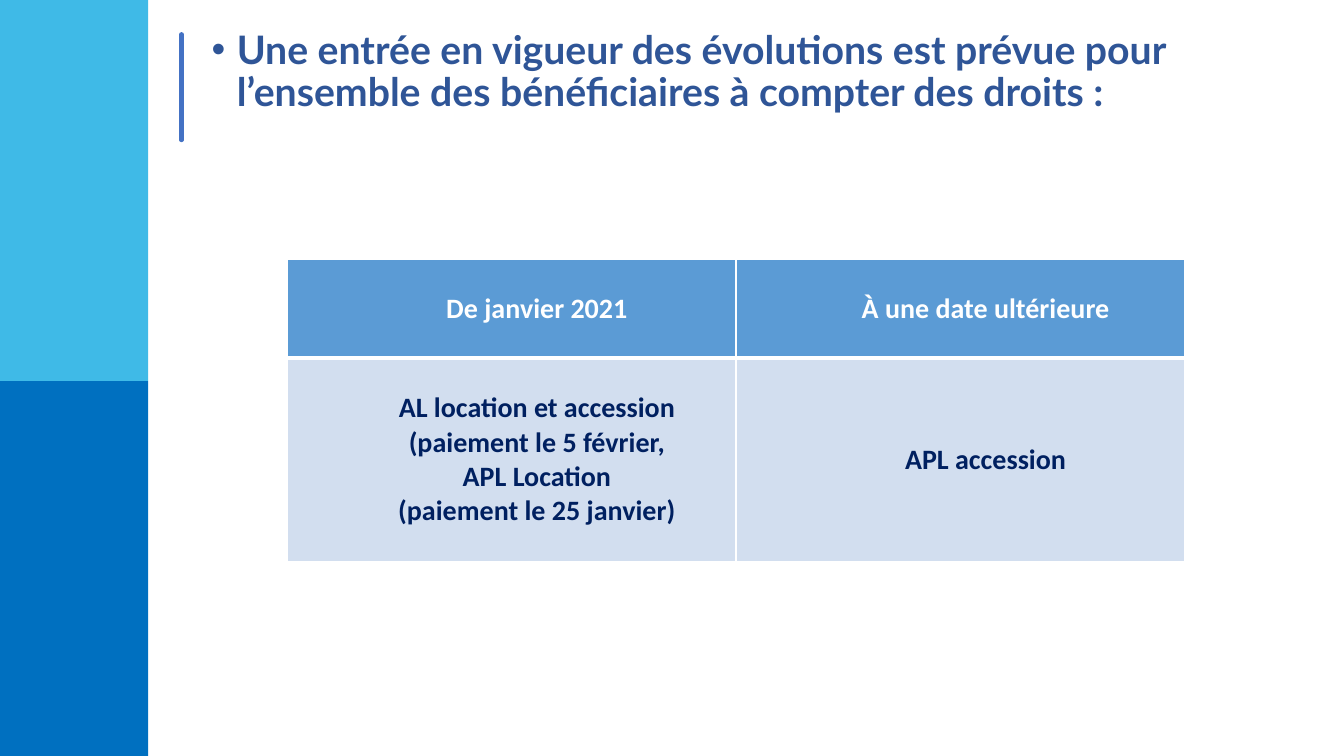
from pptx import Presentation
from pptx.dml.color import RGBColor
from pptx.enum.shapes import MSO_CONNECTOR, MSO_SHAPE
from pptx.enum.text import MSO_ANCHOR, PP_ALIGN
from pptx.oxml.ns import qn
from pptx.util import Pt
from lxml import etree

PX = 9144  # EMU, 100 px to the inch
LINE = MSO_CONNECTOR.STRAIGHT
RECT = MSO_SHAPE.RECTANGLE
MIDDLE, TOP = MSO_ANCHOR.MIDDLE, MSO_ANCHOR.TOP
CENTER = PP_ALIGN.CENTER

WHITE = RGBColor(0xFF, 0xFF, 0xFF)
SKY = RGBColor(0x3F, 0xBA, 0xE7)
BLUE = RGBColor(0x00, 0x70, 0xC0)
RULE = RGBColor(0x44, 0x72, 0xC4)
TITLE = RGBColor(0x2F, 0x55, 0x97)
HEAD = RGBColor(0x5B, 0x9B, 0xD5)
PALE = RGBColor(0xD2, 0xDE, 0xEF)
NAVY = RGBColor(0x00, 0x20, 0x60)

ROWS = [
    (98, HEAD, WHITE, 3, [["De janvier 2021"], ["À une date ultérieure"]]),
    (202, PALE, NAVY, 1, [
        ["AL location et accession", "(paiement le 5 février,",
         "APL Location", "(paiement le 25 janvier)"],
        ["APL accession"],
    ]),
]


def px(*sizes):
    return [size * PX for size in sizes]


def add_run(para, text, font, size, color):
    run = para.add_run()
    run.text = text
    run.font.name = font
    run.font.size = Pt(size)
    run.font.bold = True
    run.font.color.rgb = color


def add_band(slide, box, color):
    band = slide.shapes.add_shape(RECT, *px(*box))
    band.shadow.inherit = False
    band.fill.solid()
    band.fill.fore_color.rgb = color
    band.line.fill.background()


def add_rule(slide, ends):
    rule = slide.shapes.add_connector(LINE, *px(*ends))
    rule.line.color.rgb = RULE
    rule.line.width = Pt(3)
    rule.line._get_or_add_ln().set("cap", "rnd")
    etree.SubElement(rule._element.spPr, qn("a:effectLst"))


def add_title(slide, box, text):
    frame = slide.shapes.add_textbox(*px(*box)).text_frame
    frame.word_wrap = True
    frame.vertical_anchor = TOP
    para = frame.paragraphs[0]
    para.line_spacing = 0.9
    props = para._p.get_or_add_pPr()
    props.set("marL", str(25 * PX))
    props.set("indent", str(-25 * PX))
    etree.SubElement(props, qn("a:buFont"), typeface="Arial")
    etree.SubElement(props, qn("a:buChar"), char="•")
    add_run(para, text, "Lato", 28, TITLE)


def add_edges(cell, base):
    props = cell._tc.get_or_add_tcPr()
    for side, width in (("L", 1), ("R", 1), ("T", 1), ("B", base)):
        edge = etree.SubElement(props, qn("a:ln" + side), w=str(Pt(width)))
        fill = etree.SubElement(edge, qn("a:solidFill"))
        etree.SubElement(fill, qn("a:srgbClr"), val=str(WHITE))


def fill_cell(cell, lines, back, ink, base):
    add_edges(cell, base)  # edges come before the fill
    cell.fill.solid()
    cell.fill.fore_color.rgb = back
    cell.vertical_anchor = MIDDLE
    cell.margin_left = cell.margin_right = 7 * PX
    cell.margin_top = cell.margin_bottom = 0
    frame = cell.text_frame
    for i, line in enumerate(lines):
        para = frame.add_paragraph() if i else frame.paragraphs[0]
        para.alignment = CENTER
        para._p.get_or_add_pPr().set("marL", str(50 * PX))
        add_run(para, line, "Calibri", 20, ink)


def add_dates(slide, box):
    grid = slide.shapes.add_table(len(ROWS), 2, *px(*box)).table
    for r, (high, back, ink, base, cells) in enumerate(ROWS):
        grid.rows[r].height = high * PX
        for c, lines in enumerate(cells):
            fill_cell(grid.cell(r, c), lines, back, ink, base)


def main():
    deck = Presentation()
    deck.slide_width, deck.slide_height = px(1333, 750)
    slide = deck.slides.add_slide(deck.slide_layouts[6])

    # Side bands and title rule
    add_band(slide, (0, 378, 147, 372), BLUE)
    add_band(slide, (0, 0, 147, 378), SKY)
    add_rule(slide, (180, 34, 180, 139))

    # Dates table
    add_dates(slide, (285, 257, 890, 300))

    # Title
    add_title(slide, (200, 25, 1099, 120),
              "Une entrée en vigueur des évolutions est prévue pour "
              "l’ensemble des bénéficiaires à compter des droits :")

    deck.save("out.pptx")


if __name__ == "__main__":
    main()
